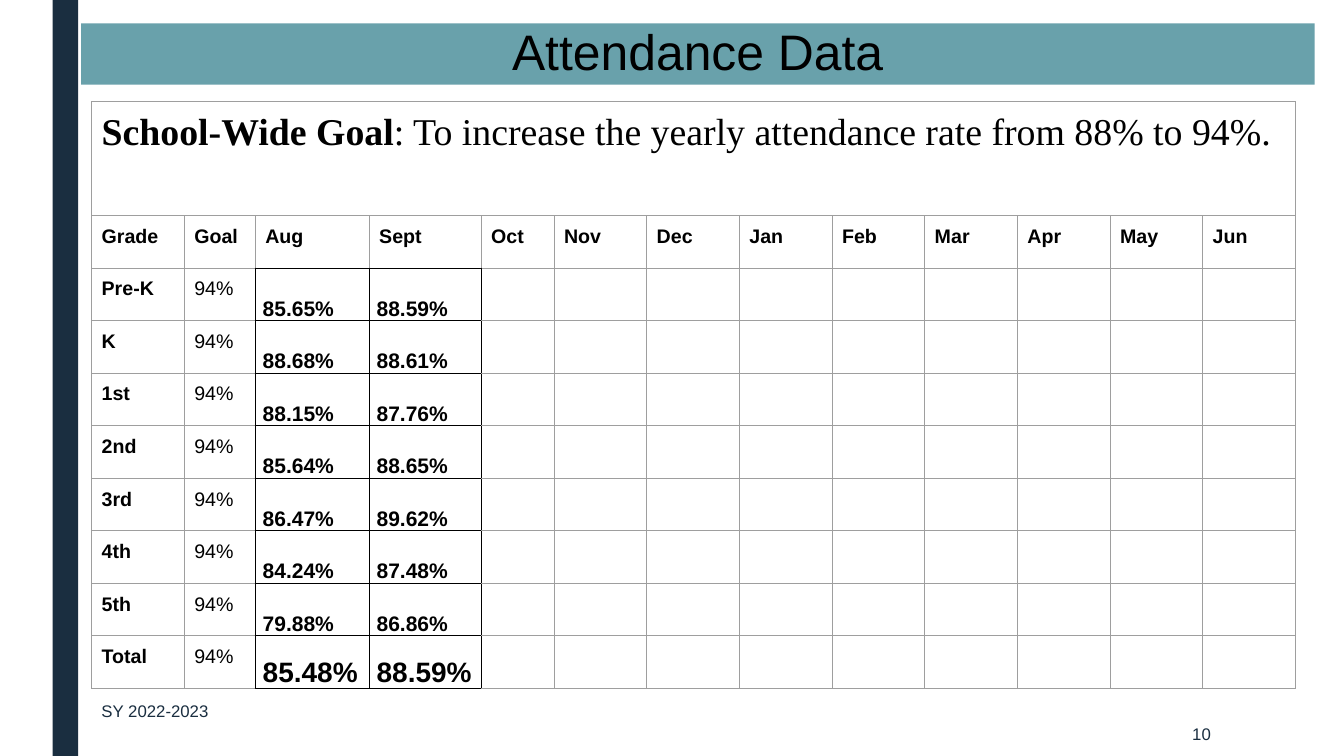
from lxml import etree
from pptx import Presentation
from pptx.dml.color import RGBColor
from pptx.enum import shapes, text
from pptx.oxml.ns import qn
from pptx.util import Pt

NAVY = RGBColor(0x1A, 0x2E, 0x40)
TEAL = RGBColor(0x69, 0xA1, 0xAB)
BLACK = RGBColor(0x00, 0x00, 0x00)
GREY = RGBColor(0x9E, 0x9E, 0x9E)

MONTHS = ["Aug", "Sept", "Oct", "Nov", "Dec", "Jan", "Feb", "Mar", "Apr", "May", "Jun"]
HEADERS = ["Grade", "Goal"] + MONTHS
GOAL = "94%"
RATES = [
    ("Pre-K", "85.65%", "88.59%"),
    ("K", "88.68%", "88.61%"),
    ("1st", "88.15%", "87.76%"),
    ("2nd", "85.64%", "88.65%"),
    ("3rd", "86.47%", "89.62%"),
    ("4th", "84.24%", "87.48%"),
    ("5th", "79.88%", "86.86%"),
    ("Total", "85.48%", "88.59%"),
]
COLUMN_WIDTHS = [66.2, 50.7, 81.4, 80, 52.1] + [66.2] * 8
GOAL_ROW_HEIGHT = 81.4
ROW_HEIGHT = 37.54
FIRST_RATE_ROW = 2
RATE_COLUMNS = (2, 3)


def place(shape, left, top, width, height):
    shape.left, shape.top = Pt(left), Pt(top)
    shape.width, shape.height = Pt(width), Pt(height)


def set_font(font, size, color=BLACK, bold=False, name="Arial"):
    font.name, font.size, font.bold = name, Pt(size), bold
    font.color.rgb = color


def add_side_bar(slide):
    bar = slide.shapes.add_shape(
        shapes.MSO_SHAPE.RECTANGLE, Pt(37.6), Pt(0), Pt(18.2), Pt(540))
    bar.shadow.inherit = False
    bar.fill.solid()
    bar.fill.fore_color.rgb = NAVY
    bar.line.fill.background()


def set_title(slide, wording):
    title = slide.shapes.title
    place(title, 57.9, 16.7, 881.2, 43.8)
    title.fill.solid()
    title.fill.fore_color.rgb = TEAL
    frame = title.text_frame
    frame.text = wording
    frame.auto_size = text.MSO_AUTO_SIZE.NONE
    frame.vertical_anchor = text.MSO_ANCHOR.MIDDLE
    paragraph = frame.paragraphs[0]
    paragraph.alignment = text.PP_ALIGN.CENTER
    paragraph.line_spacing = 0.89
    set_font(paragraph.font, 35.6)


def add_footer(slide, wording, left, top, width, alignment):
    box = slide.shapes.add_textbox(Pt(left), Pt(top), Pt(width), Pt(31.7))
    frame = box.text_frame
    frame.word_wrap = True
    frame.vertical_anchor = text.MSO_ANCHOR.MIDDLE
    paragraph = frame.paragraphs[0]
    paragraph.text = wording
    paragraph.alignment = alignment
    set_font(paragraph.font, 12, NAVY)


def is_rate(row, column):
    return row >= FIRST_RATE_ROW and column in RATE_COLUMNS


def set_borders(cell, row, column):
    """Draw grey borders, black on every side that touches a rate."""
    neighbours = {
        "a:lnL": (row, column - 1),
        "a:lnR": (row, column + 1),
        "a:lnT": (row - 1, column),
        "a:lnB": (row + 1, column),
    }
    properties = cell._tc.get_or_add_tcPr()
    for side, neighbour in neighbours.items():
        color = BLACK if is_rate(row, column) or is_rate(*neighbour) else GREY
        line = etree.SubElement(properties, qn(side), w=str(Pt(0.75)))
        fill = etree.SubElement(line, qn("a:solidFill"))
        etree.SubElement(fill, qn("a:srgbClr"), val=str(color))


def set_margins(cell, horizontal, vertical):
    cell.margin_left = cell.margin_right = Pt(horizontal)
    cell.margin_top = cell.margin_bottom = Pt(vertical)


def fill_cell(cell, wording, size=14, bold=True):
    set_margins(cell, 7.2, 7.2)
    paragraph = cell.text_frame.paragraphs[0]
    paragraph.text = wording
    set_font(paragraph.font, size, bold=bold)


def fill_rate(cell, rate, size):
    fill_cell(cell, rate, size)
    set_margins(cell, 5.4, 0)
    cell.vertical_anchor = text.MSO_ANCHOR.BOTTOM


def fill_goal(cell):
    set_margins(cell, 7.2, 7.2)
    paragraph = cell.text_frame.paragraphs[0]
    for wording, bold in (
        ("School-Wide Goal", True),
        (": To increase the yearly attendance rate from 88% to 94%.", False),
    ):
        run = paragraph.add_run()
        run.text = wording
        set_font(run.font, 27, bold=bold, name="Times New Roman")


def add_attendance_table(slide):
    row_count = FIRST_RATE_ROW + len(RATES)
    height = GOAL_ROW_HEIGHT + ROW_HEIGHT * (row_count - 1)
    table = slide.shapes.add_table(
        row_count, len(HEADERS), Pt(65.4), Pt(72.5),
        Pt(sum(COLUMN_WIDTHS)), Pt(height)).table
    table.first_row = table.horz_banding = False
    for column, width in zip(table.columns, COLUMN_WIDTHS):
        column.width = Pt(width)
    for index, row in enumerate(table.rows):
        row.height = Pt(ROW_HEIGHT if index else GOAL_ROW_HEIGHT)
        for column, cell in enumerate(row.cells):
            set_borders(cell, index, column)
            cell.fill.background()

    table.cell(0, 0).merge(table.cell(0, len(HEADERS) - 1))
    fill_goal(table.cell(0, 0))
    for column, header in enumerate(HEADERS):
        fill_cell(table.cell(1, column), header)
    for row, (grade, *rates) in enumerate(RATES, FIRST_RATE_ROW):
        fill_cell(table.cell(row, 0), grade)
        fill_cell(table.cell(row, 1), GOAL, bold=False)
        for column, rate in zip(RATE_COLUMNS, rates):
            fill_rate(table.cell(row, column), rate, 20 if grade == "Total" else 15)


def main():
    presentation = Presentation()
    presentation.slide_width, presentation.slide_height = Pt(960), Pt(540)
    slide = presentation.slides.add_slide(presentation.slide_layouts[5])
    add_side_bar(slide)
    set_title(slide, "Attendance Data")
    add_footer(slide, "10", 746, 508.5, 126, text.PP_ALIGN.RIGHT)
    add_footer(slide, "SY 2022-2023", 65.4, 492, 148, text.PP_ALIGN.LEFT)
    add_attendance_table(slide)
    presentation.save("out.pptx")


if __name__ == "__main__":
    main()
